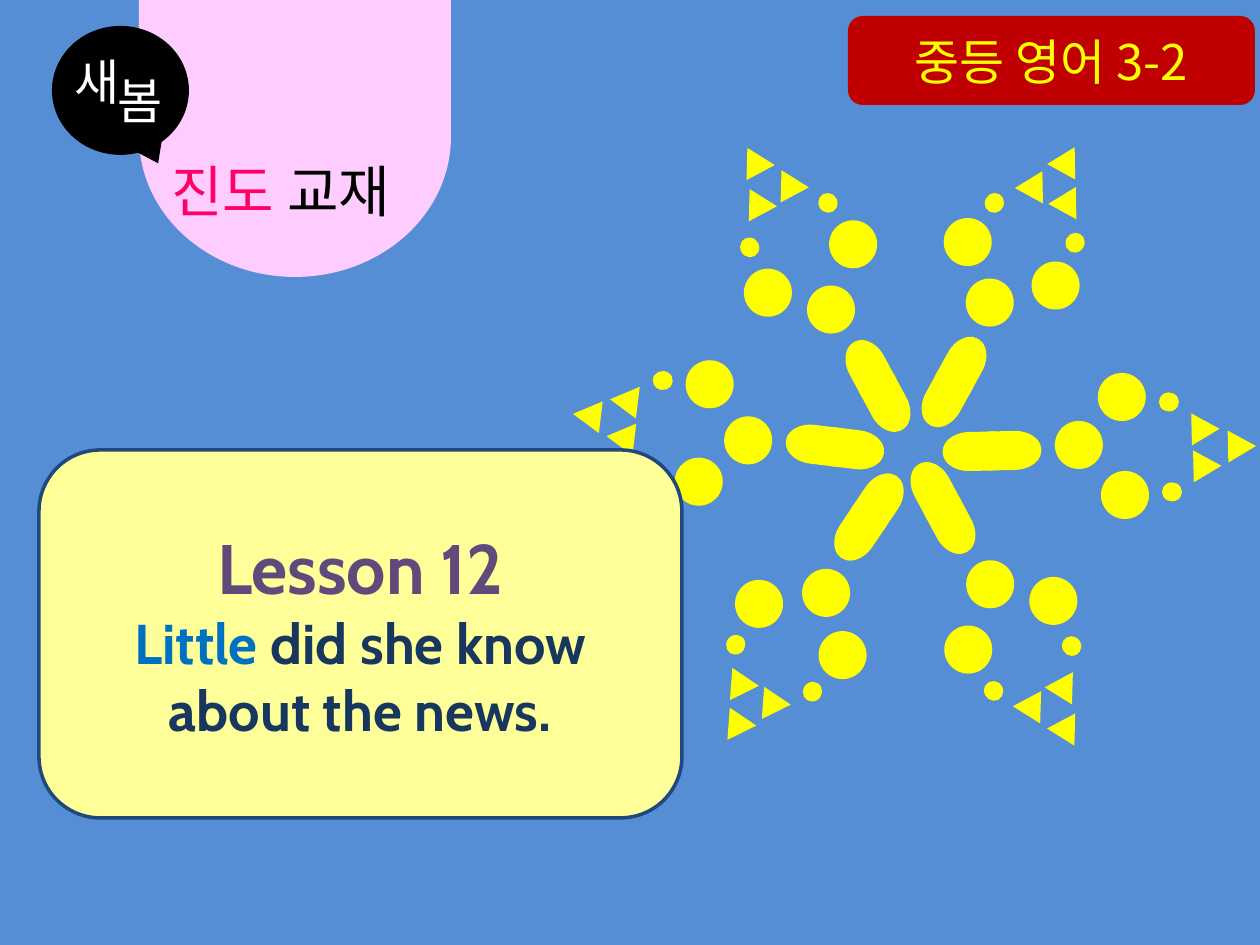
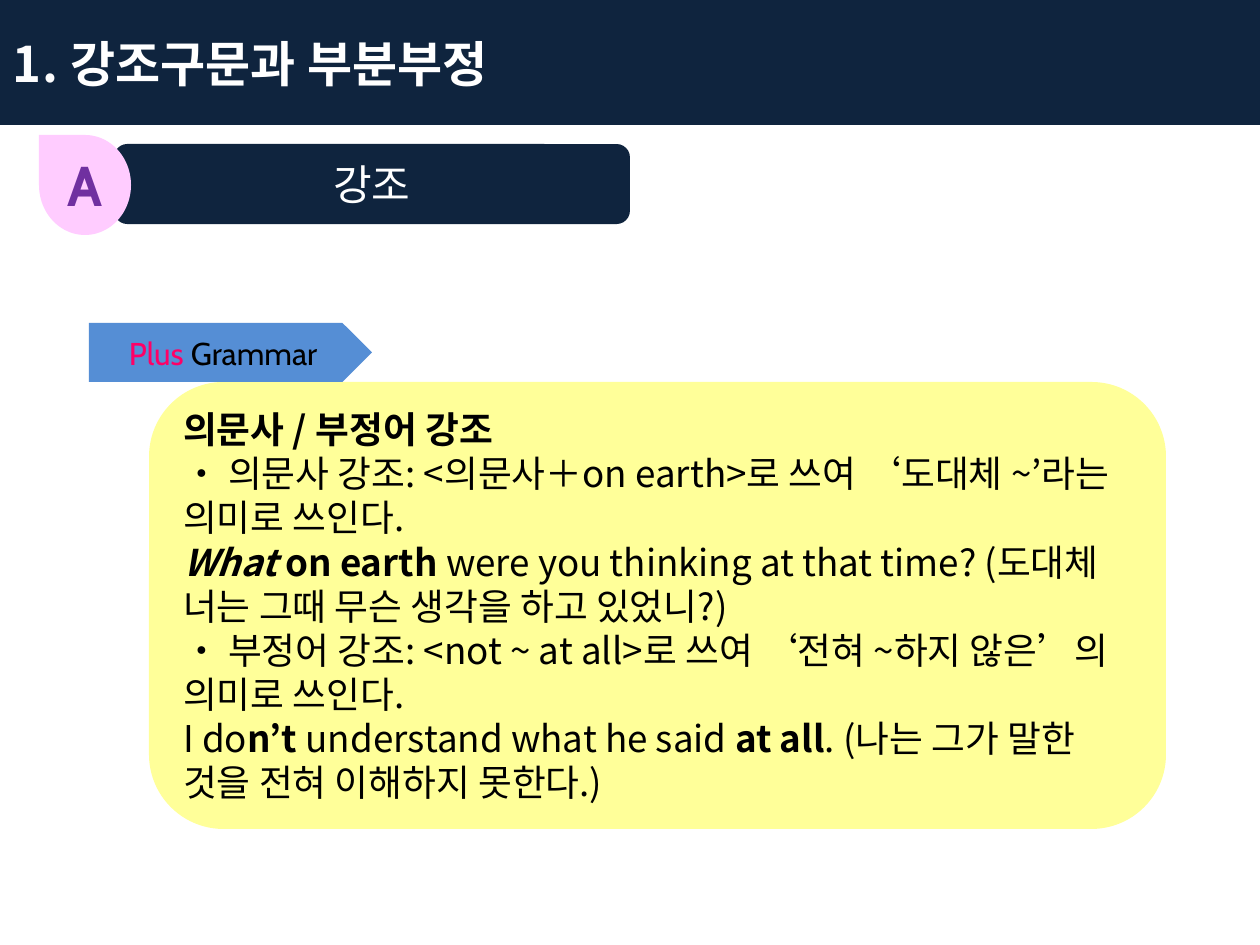
from math import cos, radians, sin

from pptx import Presentation
from pptx.dml.color import RGBColor
from pptx.enum.shapes import MSO_SHAPE
from pptx.enum.text import MSO_ANCHOR, PP_ALIGN
from pptx.oxml.ns import qn
from pptx.util import Pt
from lxml.etree import SubElement

PX = 7257  # EMU in one px, 126 px to the inch
WIDTH, HEIGHT = 1260, 945

COLORS = {
    "sky": "558ED5", "navy": "0F243E", "yellow": "FFFF00", "cream": "FFFF99",
    "pink": "FFCCFF", "rose": "FF0066", "red": "C00000", "black": "000000",
    "white": "FFFFFF", "offwhite": "FCFCFD", "border": "1F497D",
    "plum": "604A7B", "blue": "0070C0", "ink": "17375E", "purple": "7030A0",
}
CABIN, NOTO = "Cabin", "Noto Sans CJK KR"

# Text is a list of paragraphs; a run is (text, colour, flags, size if its own).
SERIES_MARK = [("새", (62, 45, 100, 72)), ("봄", (105, 64, 76, 72))]
SERIES_KIND = [[("진도 ", "rose", ""), ("교재", "black", "")]]
GRADE = [[("중등 영어 3-2", "yellow", "")]]
LESSON = [
    [("Lesson 12", "plum", "b", 40)],
    [("Little ", "blue", "b"), ("did she know about the news.", "ink", "b")],
]
UNIT_TITLE = [[("1. ", "offwhite", "bs"), ("강조구문과 부분부정", "white", "b")]]
SECTION_LETTER = [[("A", "purple", "b")]]
SECTION_NAME = [[("강조", "white", "")]]
PLUS_LABEL = [[("Plus ", "rose", ""), ("Grammar", "black", "")]]
GRAMMAR = [
    [("의문사 / 부정어 강조", "black", "b")],
    [("• 의문사 강조: <의문사＋on earth>로 쓰여 ‘도대체 ~’라는 의미로 쓰인다.", "black", "")],
    [("What", "black", "bi"), (" on earth ", "black", "b"),
     ("were you thinking at that time? (도대체", "black", "")],
    [("너는 그때 무슨 생각을 하고 있었니?)", "black", "")],
    [("• 부정어 강조: <not ~ at all>로 쓰여 ‘전혀 ~하지 않은’의 의미로 쓰인다.", "black", "")],
    [("I do", "black", ""), ("n’t ", "black", "b"),
     ("understand what he said ", "black", ""), ("at all", "black", "b"),
     (". (나는 그가 말한 것을 전혀 이해하지 못한다.)", "black", "")],
]

# Petal parts: shape, width, height, own turn, places as (outward, sideways).
PETAL_PARTS = [
    (MSO_SHAPE.ISOSCELES_TRIANGLE, 32, 28, 0, [(250, 1), (215, 20), (214, -17)]),
    (MSO_SHAPE.OVAL, 19, 20, 0, [(179, 45), (178, -45)]),
    (MSO_SHAPE.FLOWCHART_DELAY, 53, 39, 90, [(-23, 0)]),
    (MSO_SHAPE.FLOWCHART_DELAY, 53, 39, -90, [(23, 0)]),
    (MSO_SHAPE.OVAL, 48, 48, 0, [(131, -51), (132, 47), (87, -4)]),
]
# Petals: centre of the stem, turn, lean of the parts, stretch, places left out.
PETALS = [
    ((878, 386), 331.8, -0.8, 1.03, []),
    ((943, 508), 151.8, -1, 1.03, []),
    ((869, 517), 214, -1.9, 1, []),
    ((835, 447), 277, 0, 1, [(178, -45)]),
    ((954, 382), 28.8, -1.9, 1, []),
    ((992, 451), 88.7, 0, 1, []),
]


def color(name):
    return RGBColor.from_string(COLORS[name])


def write(shape, paragraphs, size, font=NOTO, align=PP_ALIGN.LEFT,
          anchor=MSO_ANCHOR.MIDDLE):
    frame = shape.text_frame
    frame.word_wrap = True
    frame.vertical_anchor = anchor
    for index, runs in enumerate(paragraphs):
        paragraph = frame.paragraphs[0] if index == 0 else frame.add_paragraph()
        paragraph.alignment = align
        for text, color_name, flags, *own_size in runs:
            run = paragraph.add_run()
            run.text = text
            run.font.size = Pt(own_size[0] if own_size else size)
            run.font.name = font
            run.font.bold = "b" in flags
            run.font.italic = "i" in flags
            run.font.color.rgb = color(color_name)
            properties = run.font._element
            SubElement(properties, qn("a:ea")).set("typeface", NOTO)
            if "s" in flags:
                properties.set("spc", "50")


def add_shape(slide, kind, box, fill, rotation=0, line=None):
    shape = slide.shapes.add_shape(kind, *(round(value * PX) for value in box))
    shape.shadow.inherit = False
    shape.rotation = rotation % 360
    shape.fill.solid()
    shape.fill.fore_color.rgb = color(fill)
    if line:
        shape.line.color.rgb = color(line)
        shape.line.width = Pt(2)
    else:
        shape.line.fill.background()
    return shape


def add_text(slide, box, paragraphs, size, font=NOTO):
    text_box = slide.shapes.add_textbox(*(value * PX for value in box))
    write(text_box, paragraphs, size, font, anchor=MSO_ANCHOR.TOP)


def add_petal(slide, stem, turn, lean, stretch, left_out):
    """Place each part along the petal's direction, seen from its stem."""
    angle = radians(turn + lean)
    for kind, width, height, own_turn, places in PETAL_PARTS:
        for place in places:
            if place in left_out:
                continue
            outward, sideways = place[0] * stretch, place[1]
            if kind == MSO_SHAPE.FLOWCHART_DELAY:
                angle_here = radians(turn)
            else:
                angle_here = angle
            x = stem[0] + outward * sin(angle_here) + sideways * cos(angle_here)
            y = stem[1] - outward * cos(angle_here) + sideways * sin(angle_here)
            box = (x - width / 2, y - height / 2, width, height)
            add_shape(slide, kind, box, "yellow", turn + own_turn)


def add_slide(presentation, background):
    slide = presentation.slides.add_slide(presentation.slide_layouts[6])
    slide.background.fill.solid()
    slide.background.fill.fore_color.rgb = color(background)
    return slide


def build_cover(presentation):
    slide = add_slide(presentation, "sky")
    for petal in PETALS:
        add_petal(slide, *petal)

    add_shape(slide, MSO_SHAPE.FLOWCHART_DELAY, (155, -19, 280, 312), "pink", 90)
    bubble = add_shape(slide, MSO_SHAPE.OVAL_CALLOUT, (52, 26, 137, 129), "black")
    bubble.adjustments[0] = 0.275
    bubble.adjustments[1] = 0.565
    for syllable, box in SERIES_MARK:
        add_text(slide, box, [[(syllable, "white", "")]], 28)
    add_text(slide, (159, 150, 292, 149), SERIES_KIND, 32, CABIN)

    grade = add_shape(slide, MSO_SHAPE.FLOWCHART_ALTERNATE_PROCESS,
                      (848, 16, 407, 89), "red")
    write(grade, GRADE, 28, align=PP_ALIGN.CENTER)
    lesson = add_shape(slide, MSO_SHAPE.ROUNDED_RECTANGLE,
                       (39, 450, 643, 368), "cream", line="border")
    write(lesson, LESSON, 32, CABIN, PP_ALIGN.CENTER)


def build_grammar(presentation):
    slide = add_slide(presentation, "white")
    section = add_shape(slide, MSO_SHAPE.FLOWCHART_ALTERNATE_PROCESS,
                        (114, 144, 516, 80), "navy")
    write(section, SECTION_NAME, 24, align=PP_ALIGN.CENTER)
    title_band = add_shape(slide, MSO_SHAPE.RECTANGLE, (0, 0, WIDTH, 125), "navy")
    write(title_band, UNIT_TITLE, 28)
    add_shape(slide, MSO_SHAPE.TEAR, (35, 139, 100, 92), "pink", 270)
    add_text(slide, (55, 144, 60, 80), SECTION_LETTER, 32, CABIN)

    grammar = add_shape(slide, MSO_SHAPE.FLOWCHART_ALTERNATE_PROCESS,
                        (149, 382, 1017, 447), "cream")
    write(grammar, GRAMMAR, 21)
    label = add_shape(slide, MSO_SHAPE.PENTAGON, (89, 323, 283, 59), "sky")
    write(label, PLUS_LABEL, 18, CABIN, PP_ALIGN.CENTER)


def main():
    presentation = Presentation()
    presentation.slide_width = WIDTH * PX
    presentation.slide_height = HEIGHT * PX
    build_cover(presentation)
    build_grammar(presentation)
    presentation.save("out.pptx")


if __name__ == "__main__":
    main()
